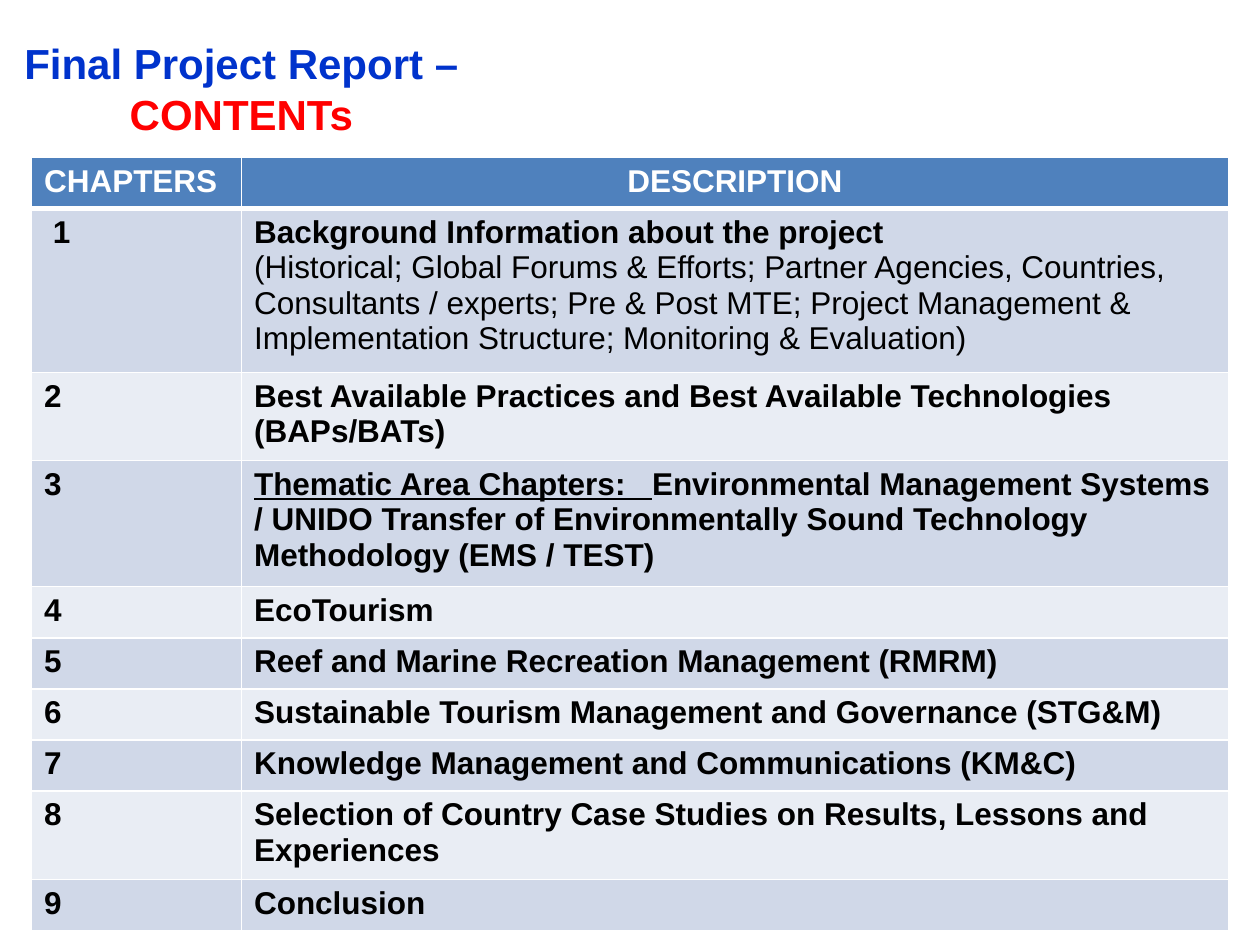
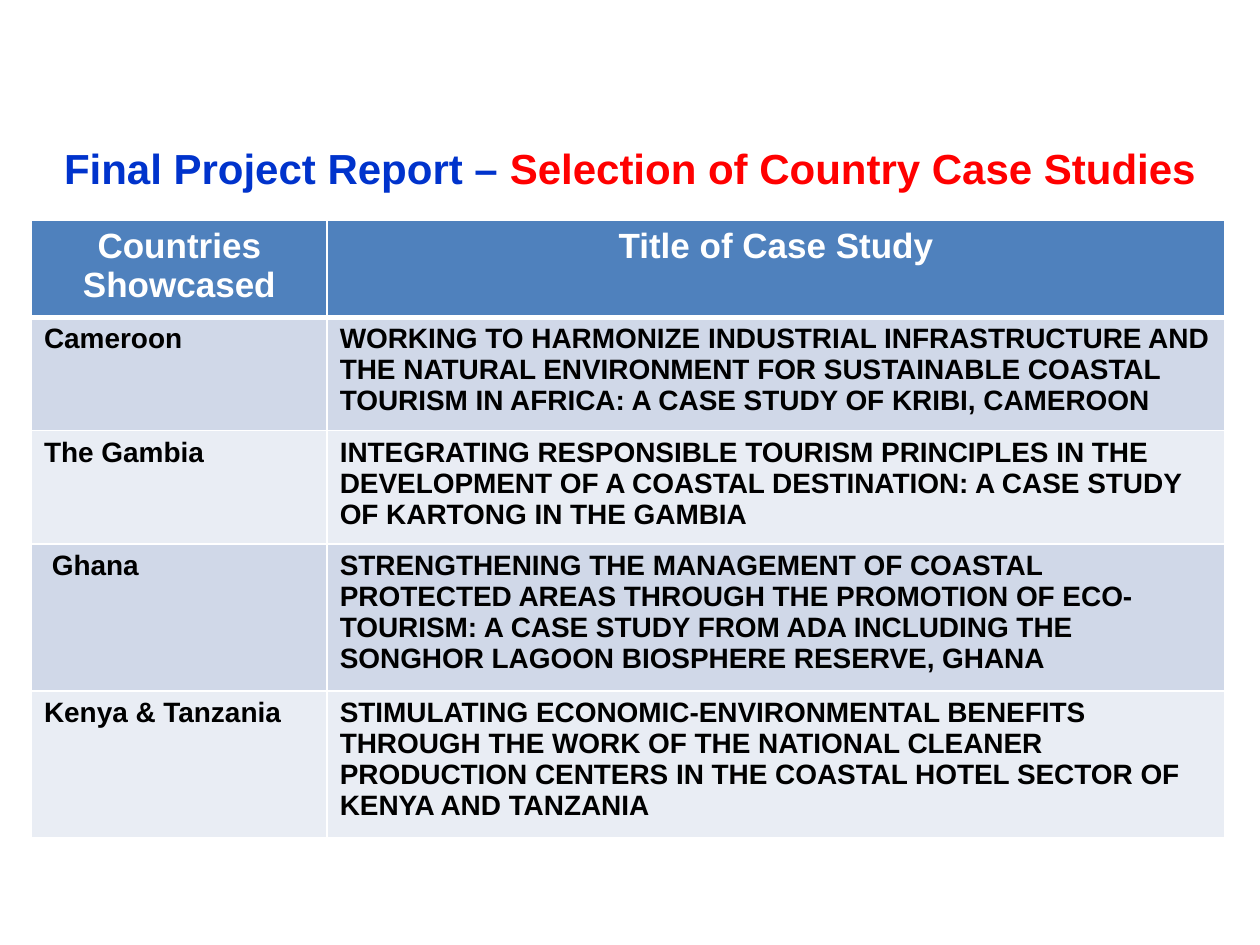
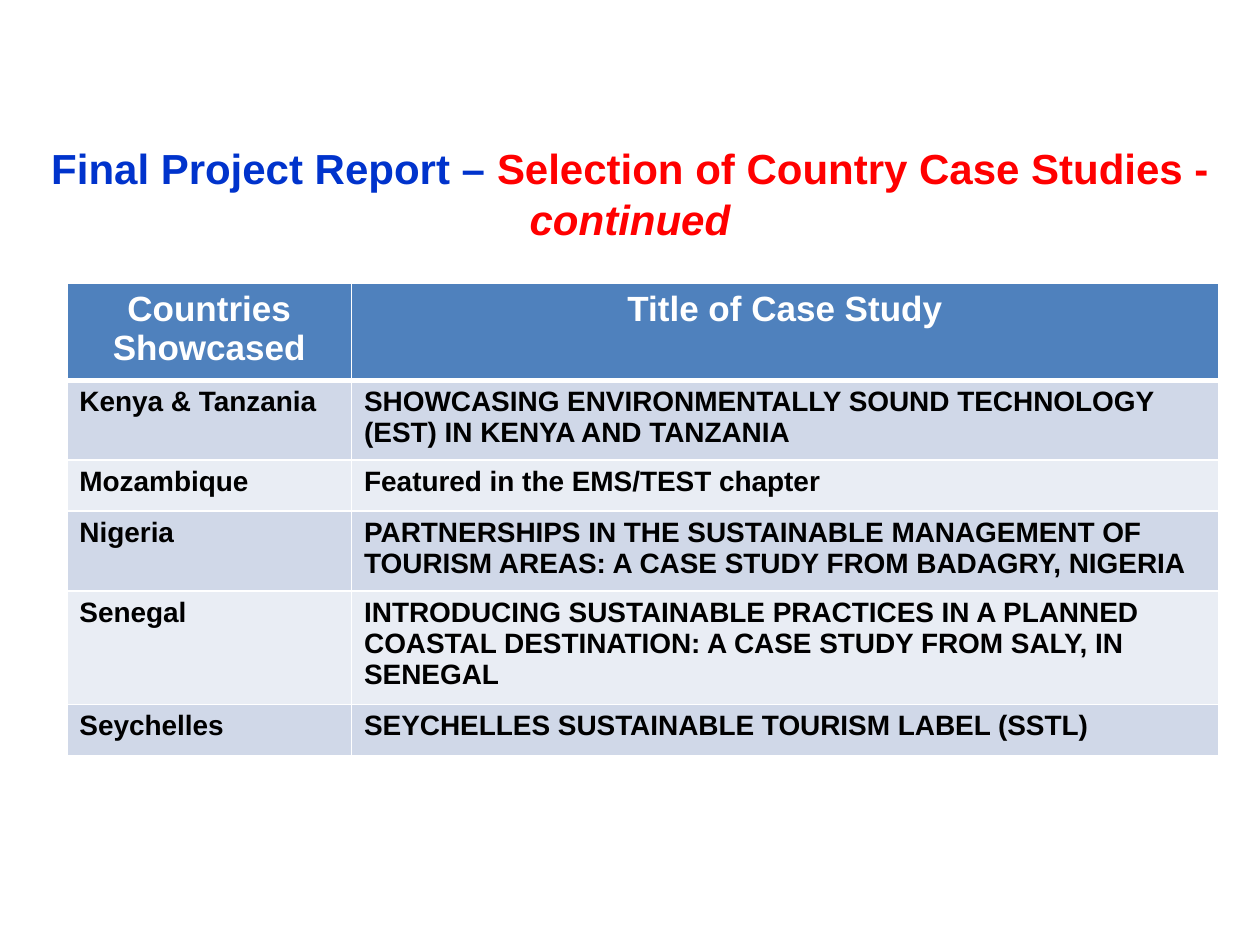
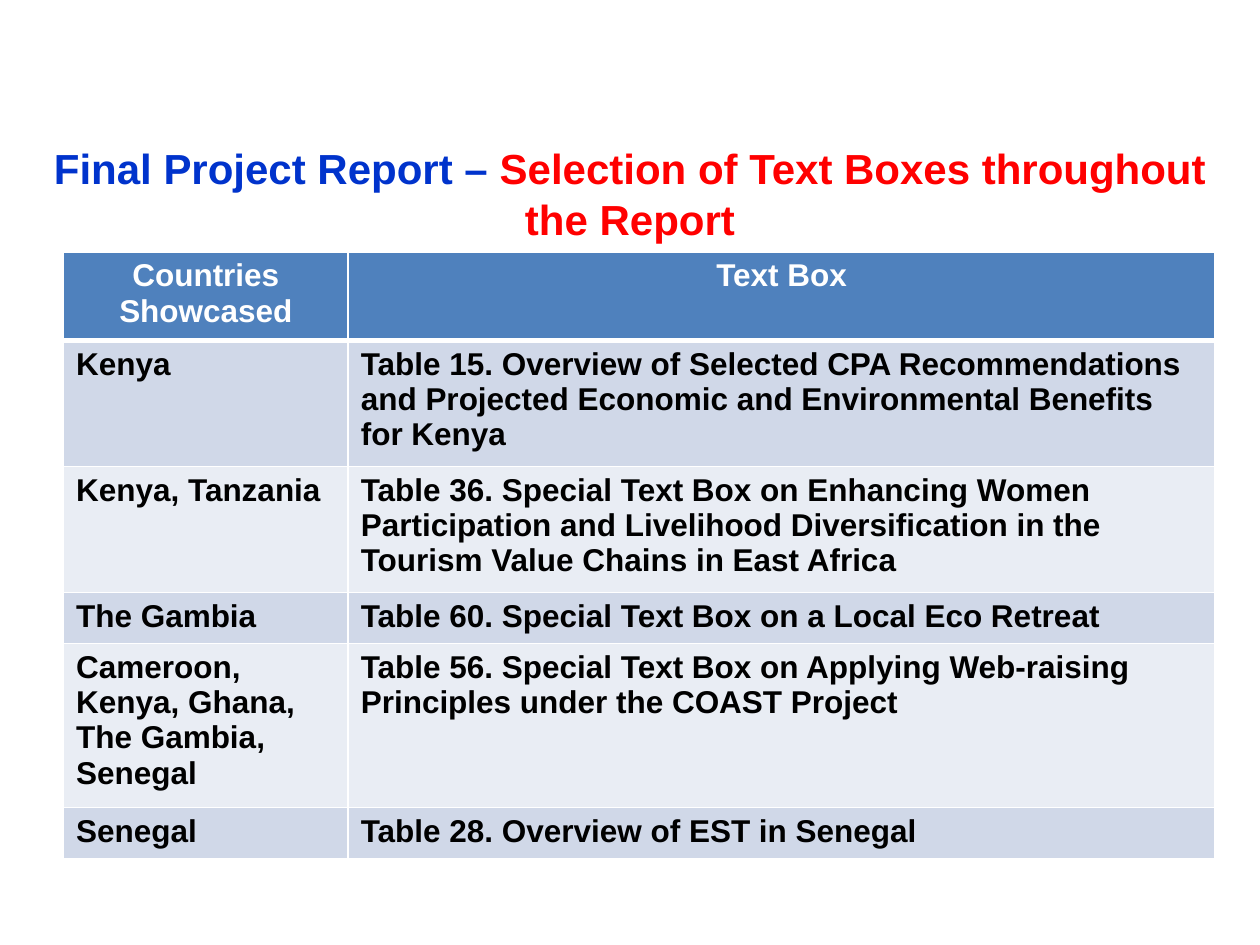
from lxml import etree
from pptx import Presentation
from pptx.dml.color import RGBColor
from pptx.enum.text import MSO_ANCHOR as Anchor, MSO_AUTO_SIZE as AutoSize, PP_ALIGN as Align
from pptx.oxml.ns import qn
from pptx.util import Pt

# Shared style
FONT = "Arial"
TITLE_BLUE = RGBColor(0x00, 0x33, 0xCC)
TITLE_RED = RGBColor(0xFF, 0x00, 0x00)
HEADER_FILL = RGBColor(0x4F, 0x81, 0xBD)
BAND_FILLS = (RGBColor(0xD0, 0xD8, 0xE8), RGBColor(0xE9, 0xED, 0xF4))
WHITE = RGBColor(0xFF, 0xFF, 0xFF)
BLACK = RGBColor(0x00, 0x00, 0x00)
TITLE_SIZE = 24
MARGIN_X, MARGIN_Y = 7.2, 3.6
MIN_ROW_HEIGHT = 29.2
LINE_FACTOR = 1.2
THIN, THICK = 1, 3

# Content: a paragraph is a list of (text, format) runs; a row ends with its line count
TITLE_LEAD = ("Final Project Report – ", {"color": TITLE_BLUE})
CASE_HEADER = ("Countries Showcased", "Title of Case Study", 2)

SLIDES = [
    {
        "title": [("CONTENTs", {})],
        "title_box": (0, 18, 275.8, 65.5),
        "table_at": (18, 90), "columns": (120, 564),
        "header": ("CHAPTERS", "DESCRIPTION", 1),
        "header_aligns": (Align.LEFT, Align.CENTER),
        "header_size": 18, "body_size": 18,
        "rows": [
            (" 1", [
                [("Background Information about the project", {})],
                [("(Historical; Global Forums & Efforts; Partner Agencies, Countries, "
                  "Consultants / experts; Pre & Post MTE; Project Management & "
                  "Implementation Structure; Monitoring & Evaluation)", {"bold": False})],
            ], 4),
            ("2", "Best Available Practices and Best Available Technologies (BAPs/BATs)", 2),
            ("3", [[
                ("Thematic Area Chapters:   ", {"underline": True}),
                ("Environmental Management Systems / UNIDO Transfer of Environmentally "
                 "Sound Technology Methodology (EMS / TEST)", {}),
            ]], 3),
            ("4", "EcoTourism", 1),
            ("5", "Reef and Marine Recreation Management (RMRM)", 1),
            ("6", "Sustainable Tourism Management and Governance (STG&M)", 1),
            ("7", "Knowledge Management and Communications (KM&C)", 1),
            ("8", "Selection of Country Case Studies on Results, Lessons and Experiences", 2),
            ("9", "Conclusion", 1),
        ],
    },
    {
        "title": [("Selection of Country Case Studies", {})],
        "title_box": (16.5, 78, 687, 36.5),
        "table_at": (18, 126), "columns": (169, 513),
        "header": CASE_HEADER, "header_size": 20, "body_size": 16,
        "rows": [
            ("Cameroon",
             "WORKING TO HARMONIZE INDUSTRIAL INFRASTRUCTURE AND THE NATURAL ENVIRONMENT "
             "FOR SUSTAINABLE COASTAL TOURISM IN AFRICA: A CASE STUDY OF KRIBI, CAMEROON", 3),
            ("The Gambia",
             "INTEGRATING RESPONSIBLE TOURISM PRINCIPLES IN THE DEVELOPMENT OF A COASTAL "
             "DESTINATION: A CASE STUDY OF KARTONG IN THE GAMBIA", 3),
            (" Ghana",
             "STRENGTHENING THE MANAGEMENT OF COASTAL PROTECTED AREAS THROUGH THE PROMOTION "
             "OF ECO-TOURISM: A CASE STUDY FROM ADA INCLUDING THE SONGHOR LAGOON BIOSPHERE "
             "RESERVE, GHANA", 4),
            ("Kenya & Tanzania",
             "STIMULATING ECONOMIC-ENVIRONMENTAL BENEFITS THROUGH THE WORK OF THE NATIONAL "
             "CLEANER PRODUCTION CENTERS IN THE COASTAL HOTEL SECTOR OF KENYA AND TANZANIA", 4),
        ],
    },
    {
        "title": [("Selection of Country Case Studies - ", {}), ("continued", {"italic": True})],
        "title_box": (16.5, 78, 687, 65.5),
        "table_at": (38.2, 162), "columns": (162.7, 495.3),
        "header": CASE_HEADER, "header_size": 20, "body_size": 16,
        "rows": [
            ("Kenya & Tanzania",
             "SHOWCASING ENVIRONMENTALLY SOUND TECHNOLOGY (EST) IN KENYA AND TANZANIA", 2),
            ("Mozambique", "Featured in the EMS/TEST chapter", 1),
            ("Nigeria",
             "PARTNERSHIPS IN THE SUSTAINABLE MANAGEMENT OF TOURISM AREAS: A CASE STUDY "
             "FROM BADAGRY, NIGERIA", 2),
            ("Senegal",
             "INTRODUCING SUSTAINABLE PRACTICES IN A PLANNED COASTAL DESTINATION: A CASE "
             "STUDY FROM SALY, IN SENEGAL", 3),
            ("Seychelles", "SEYCHELLES SUSTAINABLE TOURISM LABEL (SSTL)", 1),
        ],
    },
    {
        "title": [("Selection of Text Boxes throughout the Report", {})],
        "title_box": (16.5, 78, 687, 65.5),
        "table_at": (36.3, 144), "columns": (162.7, 495.3),
        "header": ("Countries Showcased", "Text Box", 2),
        "header_size": 18, "body_size": 18,
        "rows": [
            ("Kenya",
             "Table 15. Overview of Selected CPA Recommendations and Projected Economic and "
             "Environmental Benefits for Kenya", 3),
            ("Kenya, Tanzania",
             "Table 36. Special Text Box on Enhancing Women Participation and Livelihood "
             "Diversification in the Tourism Value Chains in East Africa", 3),
            ("The Gambia", "Table 60. Special Text Box on a Local Eco Retreat", 1),
            ("Cameroon, Kenya, Ghana, The Gambia, Senegal",
             "Table 56. Special Text Box on Applying Web-raising Principles under the "
             "COAST Project", 4),
            ("Senegal", "Table 28. Overview of EST in Senegal", 1),
        ],
    },
]


def write_text(frame, content, align=Align.LEFT, **base):
    """Fill a text frame with a string or a list of paragraphs made of runs."""
    paragraphs = [[(content, {})]] if isinstance(content, str) else content
    for index, runs in enumerate(paragraphs):
        paragraph = frame.add_paragraph() if index else frame.paragraphs[0]
        paragraph.alignment = align
        for text, changes in runs:
            style = {"bold": True, "italic": False, "underline": False, **base, **changes}
            run = paragraph.add_run()
            run.text = text
            run.font.name = FONT
            run.font.size = Pt(style["size"])
            run.font.color.rgb = style["color"]
            run.font.bold = style["bold"]
            run.font.italic = style["italic"]
            run.font.underline = style["underline"]


def set_borders(cell, top, bottom):
    """Draw white cell borders; the line elements come before the fill."""
    properties = cell._tc.get_or_add_tcPr()
    widths = {"a:lnL": THIN, "a:lnR": THIN, "a:lnT": top, "a:lnB": bottom}
    for position, (tag, width) in enumerate(widths.items()):
        line = etree.Element(qn(tag), w=str(Pt(width)))
        fill = etree.SubElement(line, qn("a:solidFill"))
        etree.SubElement(fill, qn("a:srgbClr"), val=str(WHITE))
        properties.insert(position, line)


def add_title(slide, content):
    title = slide.shapes.title
    title.left, title.top, title.width, title.height = map(Pt, content["title_box"])
    frame = title.text_frame
    frame.word_wrap = True
    frame.auto_size = AutoSize.SHAPE_TO_FIT_TEXT
    frame.vertical_anchor = Anchor.TOP
    frame.margin_left = frame.margin_right = Pt(MARGIN_X)
    frame.margin_top = frame.margin_bottom = Pt(MARGIN_Y)
    write_text(frame, [[TITLE_LEAD, *content["title"]]], Align.CENTER,
               size=TITLE_SIZE, color=TITLE_RED)


def add_content_table(slide, content):
    rows = [content["header"], *content["rows"]]
    sizes = [content["header_size"]] + [content["body_size"]] * len(content["rows"])
    heights = [max(MIN_ROW_HEIGHT, 2 * MARGIN_Y + LINE_FACTOR * size * row[-1])
               for row, size in zip(rows, sizes)]
    columns = content["columns"]
    left, top = content["table_at"]
    table = slide.shapes.add_table(len(rows), len(columns), Pt(left), Pt(top),
                                   Pt(sum(columns)), Pt(sum(heights))).table
    table.horz_banding = False
    for column, width in zip(table.columns, columns):
        column.width = Pt(width)

    header_aligns = content.get("header_aligns", (Align.CENTER, Align.CENTER))
    for index, (row, size, height) in enumerate(zip(rows, sizes, heights)):
        is_header = index == 0
        table.rows[index].height = Pt(height)
        for number, text in enumerate(row[:-1]):
            cell = table.cell(index, number)
            cell.fill.solid()
            cell.fill.fore_color.rgb = HEADER_FILL if is_header else BAND_FILLS[(index - 1) % 2]
            set_borders(cell, THICK if index == 1 else THIN, THICK if is_header else THIN)
            write_text(cell.text_frame, text,
                       header_aligns[number] if is_header else Align.LEFT,
                       size=size, color=WHITE if is_header else BLACK)


def main():
    presentation = Presentation()
    presentation.slide_width, presentation.slide_height = Pt(720), Pt(540)
    title_only = presentation.slide_layouts[5]
    for content in SLIDES:
        slide = presentation.slides.add_slide(title_only)
        add_title(slide, content)
        add_content_table(slide, content)
    presentation.save("out.pptx")


if __name__ == "__main__":
    main()
